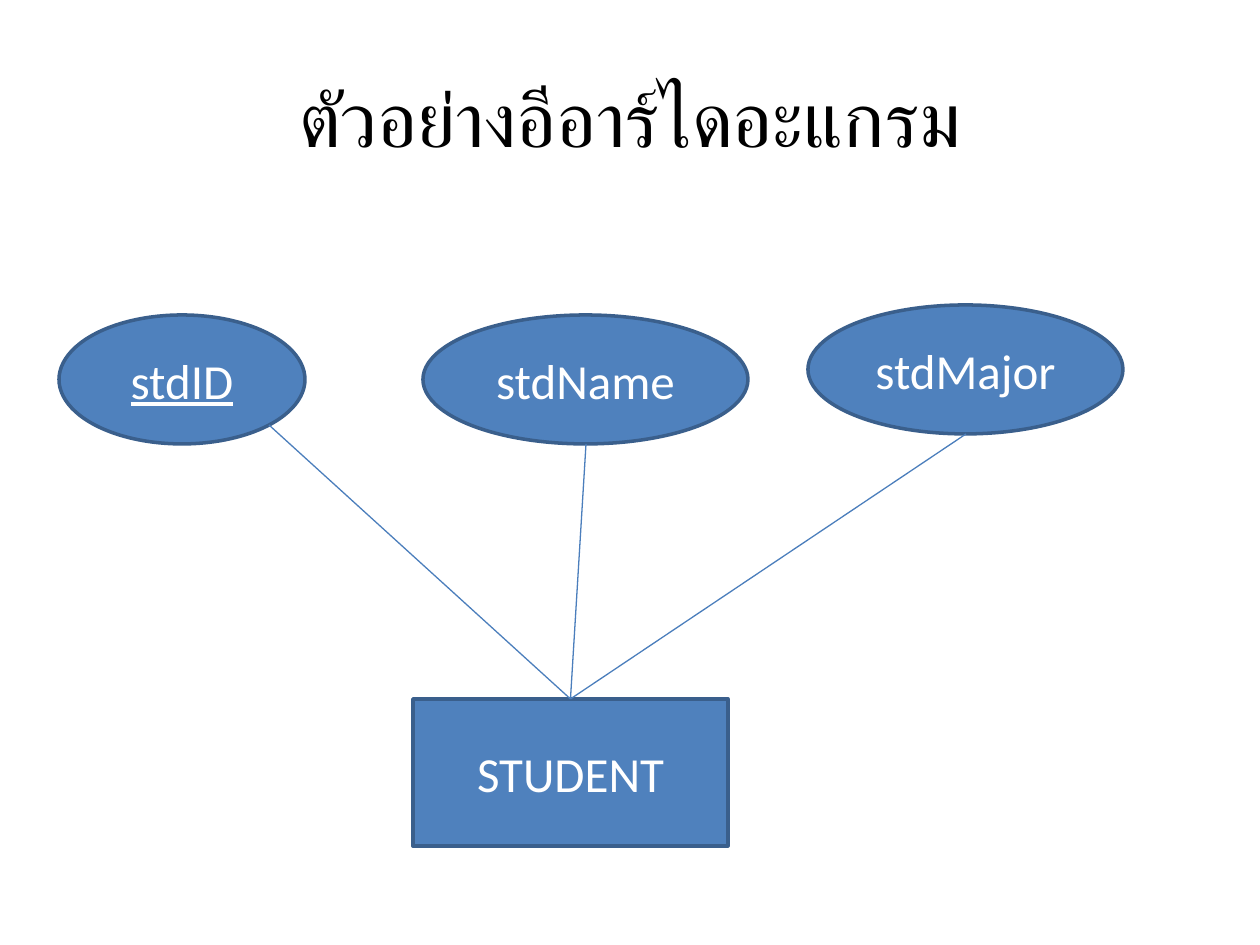
from math import sqrt

from lxml.etree import SubElement
from pptx import Presentation
from pptx.dml.color import RGBColor
from pptx.enum.shapes import MSO_CONNECTOR as Conn, MSO_SHAPE as Kind
from pptx.enum.text import MSO_ANCHOR as Anchor, PP_ALIGN as Align
from pptx.oxml.ns import qn
from pptx.util import Pt

SCALE = 914400 / 126  # EMU per px
FONT = "Calibri"
BLACK = RGBColor(0x00, 0x00, 0x00)
WHITE = RGBColor(0xFF, 0xFF, 0xFF)
BLUE = RGBColor(0x4F, 0x81, 0xBD)
EDGE = RGBColor(0x3A, 0x5F, 0x8C)
LINK = RGBColor(0x4B, 0x7E, 0xBC)


def emu(*px):
    return [round(n * SCALE) for n in px]


def write(frame, text, size=28, color=WHITE, under=None):
    frame.word_wrap = True
    frame.vertical_anchor = Anchor.MIDDLE
    para = frame.paragraphs[0]
    para.alignment = Align.CENTER
    run = para.add_run()
    run.text = text
    font = run.font
    font.name, font.size, font.underline = FONT, Pt(size), under
    font.color.rgb = color


class Board:
    def __init__(self, slide):
        self.shapes = slide.shapes

    def title(self, text, box):
        write(self.shapes.add_textbox(*emu(*box)).text_frame, text,
              size=44, color=BLACK)

    def node(self, kind, text, box, **style):
        shape = self.shapes.add_shape(kind, *emu(*box))
        shape.shadow.inherit = False
        shape.fill.solid()
        shape.fill.fore_color.rgb = BLUE
        shape.line.color.rgb = EDGE
        shape.line.width = Pt(2)
        write(shape.text_frame, text, **style)
        return shape

    def link(self, start, node):
        line = self.shapes.add_connector(Conn.STRAIGHT, *emu(*start, *start))
        line.end_connect(node, 0)
        line.line.color.rgb = LINK
        line.line.width = Pt(0.75)
        SubElement(line._element.spPr, qn("a:effectLst"))


def main():
    deck = Presentation()
    deck.slide_width, deck.slide_height = emu(1260, 945)
    board = Board(deck.slides.add_slide(deck.slide_layouts[6]))

    # Title
    board.title("ตัวอย่างอีอาร์ไดอะแกรม", (63, 38, 1134, 157))

    # Entity
    entity = board.node(Kind.RECTANGLE, "STUDENT", (413, 699, 315, 147))

    # Attributes: the key is underlined and joined at its lower right
    high = 129
    diag = 1 / sqrt(2)
    starts = []
    for text, left, top, wide, key in (
        ("stdID", 59, 315, 246, True),
        ("stdName", 423, 315, 325, None),
        ("stdMajor", 808, 305, 315, None),
    ):
        board.node(Kind.OVAL, text, (left, top, wide, high), under=key)
        across, down = (diag, diag) if key else (0, 1)
        starts.append((round(left + wide / 2 * (1 + across)),
                       round(top + high / 2 * (1 + down))))

    # Links
    for start in starts:
        board.link(start, entity)

    deck.save("out.pptx")


if __name__ == "__main__":
    main()
